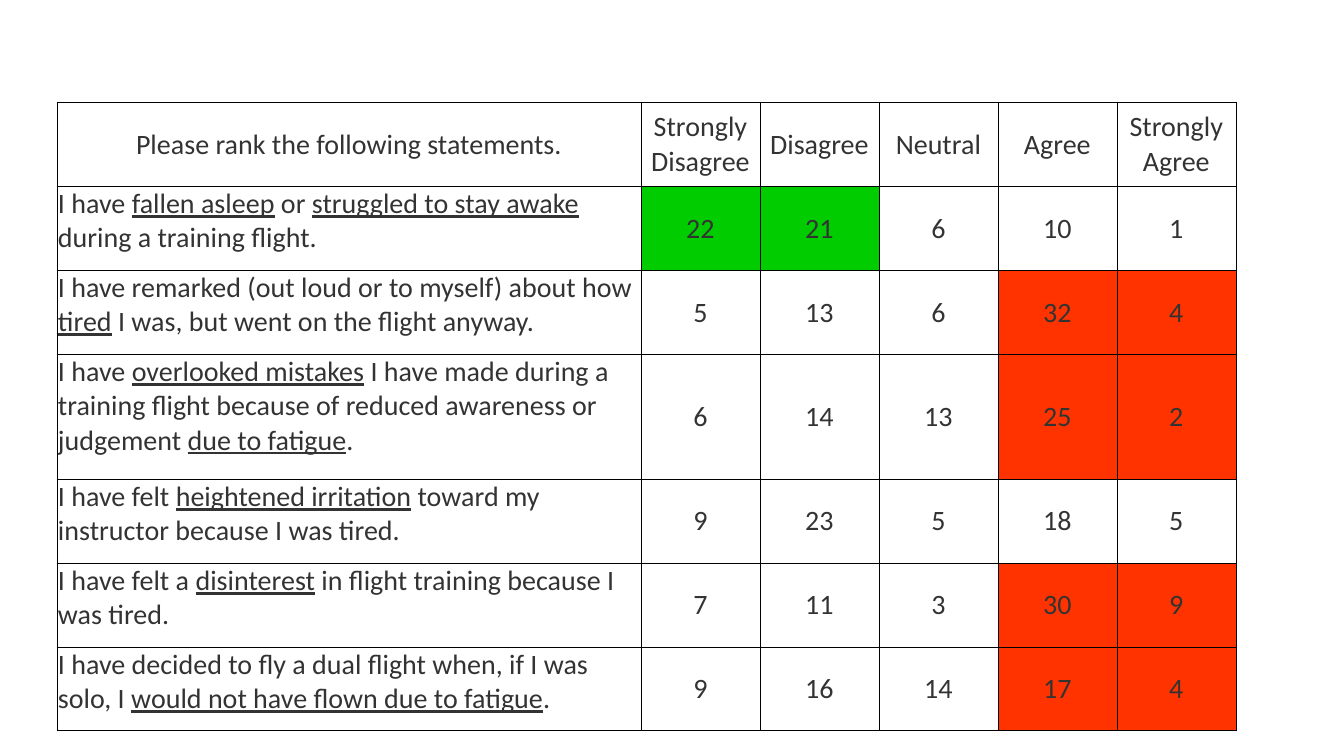
from dataclasses import dataclass

from lxml import etree
from pptx import Presentation
from pptx.dml.color import RGBColor
from pptx.enum.text import MSO_ANCHOR, PP_ALIGN
from pptx.oxml.ns import qn
from pptx.util import Pt

CENTER, LEFT = PP_ALIGN.CENTER, PP_ALIGN.LEFT
MIDDLE, TOP = MSO_ANCHOR.MIDDLE, MSO_ANCHOR.TOP

# Content: underscores enclose underlined words
HEADER = ("Please rank the following statements.", "Strongly Disagree",
          "Disagree", "Neutral", "Agree", "Strongly Agree")
# statement, counts, highlighted side
ANSWERS = [
    ("I have _fallen asleep_ or _struggled to stay awake_ during a training flight.",
     (22, 21, 6, 10, 1), "disagree"),
    ("I have remarked (out loud or to myself) about how _tired_ I was, "
     "but went on the flight anyway.",
     (5, 13, 6, 32, 4), "agree"),
    ("I have _overlooked mistakes_ I have made during a training flight because "
     "of reduced awareness or judgement _due to fatigue_.",
     (6, 14, 13, 25, 2), "agree"),
    ("I have felt _heightened irritation_ toward my instructor because I was tired.",
     (9, 23, 5, 18, 5), None),
    ("I have felt a _disinterest_ in flight training because I was tired.",
     (7, 11, 3, 30, 9), "agree"),
    ("I have decided to fly a dual flight when, if I was solo, "
     "I _would not have flown due to fatigue_.",
     (9, 16, 14, 17, 4), "agree"),
]


@dataclass(frozen=True)
class Theme:
    font: str = "Calibri"
    size: int = 20
    text: str = "333333"
    border: str = "000000"
    border_width: float = 0.5
    disagree: str = "00CC00"
    agree: str = "FF3300"


THEME = Theme()
HIGHLIGHTS = {"disagree": ((1, 2), THEME.disagree),
              "agree": ((4, 5), THEME.agree),
              None: ((), None)}

# Geometry in px
SLIDE_W, SLIDE_H = 1344, 756
TABLE_X, TABLE_Y = 57, 102
STATEMENT_W, COUNT_W = 584, 119
ROW_H, TALL_ROW_H, TALL_ROW = 84, 125, 3
INSET = 1


def px(n):
    return round(n * 914400 / 100.8)


def write(cell, text, align=CENTER, anchor=MIDDLE):
    cell.margin_left = cell.margin_right = cell.margin_top = px(INSET)
    cell.margin_bottom = 0
    cell.vertical_anchor = anchor
    p = cell.text_frame.paragraphs[0]
    p.alignment = align
    for i, part in enumerate(text.split("_")):
        r = p.add_run()
        r.text = part
        r.font.name = THEME.font
        r.font.size = Pt(THEME.size)
        r.font.color.rgb = RGBColor.from_string(THEME.text)
        if i % 2:
            r.font.underline = True


def paint(cell, color=None):
    if color:
        cell.fill.solid()
        cell.fill.fore_color.rgb = RGBColor.from_string(color)
    else:
        cell.fill.background()
    # Borders come before the fill in the cell properties
    tc_pr = cell._tc.get_or_add_tcPr()
    for i, side in enumerate(("lnL", "lnR", "lnT", "lnB")):
        ln = etree.Element(qn(f"a:{side}"), w=str(Pt(THEME.border_width)))
        fill = etree.SubElement(ln, qn("a:solidFill"))
        etree.SubElement(fill, qn("a:srgbClr"), val=THEME.border)
        tc_pr.insert(i, ln)


def main():
    prs = Presentation()
    prs.slide_width, prs.slide_height = px(SLIDE_W), px(SLIDE_H)
    s = prs.slides.add_slide(prs.slide_layouts.get_by_name("Blank"))

    # Table grid
    widths = [STATEMENT_W] + [COUNT_W] * (len(HEADER) - 1)
    heights = [ROW_H] * (len(ANSWERS) + 1)
    heights[TALL_ROW] = TALL_ROW_H
    table = s.shapes.add_table(len(heights), len(widths), px(TABLE_X), px(TABLE_Y),
                               px(sum(widths)), px(sum(heights))).table
    table.first_row = table.horz_banding = False
    for column, width in zip(table.columns, widths):
        column.width = px(width)
    for row, height in zip(table.rows, heights):
        row.height = px(height)

    # Header row
    for col, label in enumerate(HEADER):
        write(table.cell(0, col), label)
        paint(table.cell(0, col))

    # Statements and counts
    for row, (statement, counts, side) in enumerate(ANSWERS, 1):
        marked, color = HIGHLIGHTS[side]
        write(table.cell(row, 0), statement, align=LEFT, anchor=TOP)
        paint(table.cell(row, 0))
        for col, count in enumerate(counts, 1):
            write(table.cell(row, col), str(count))
            paint(table.cell(row, col), color if col in marked else None)

    prs.save("out.pptx")


if __name__ == "__main__":
    main()
